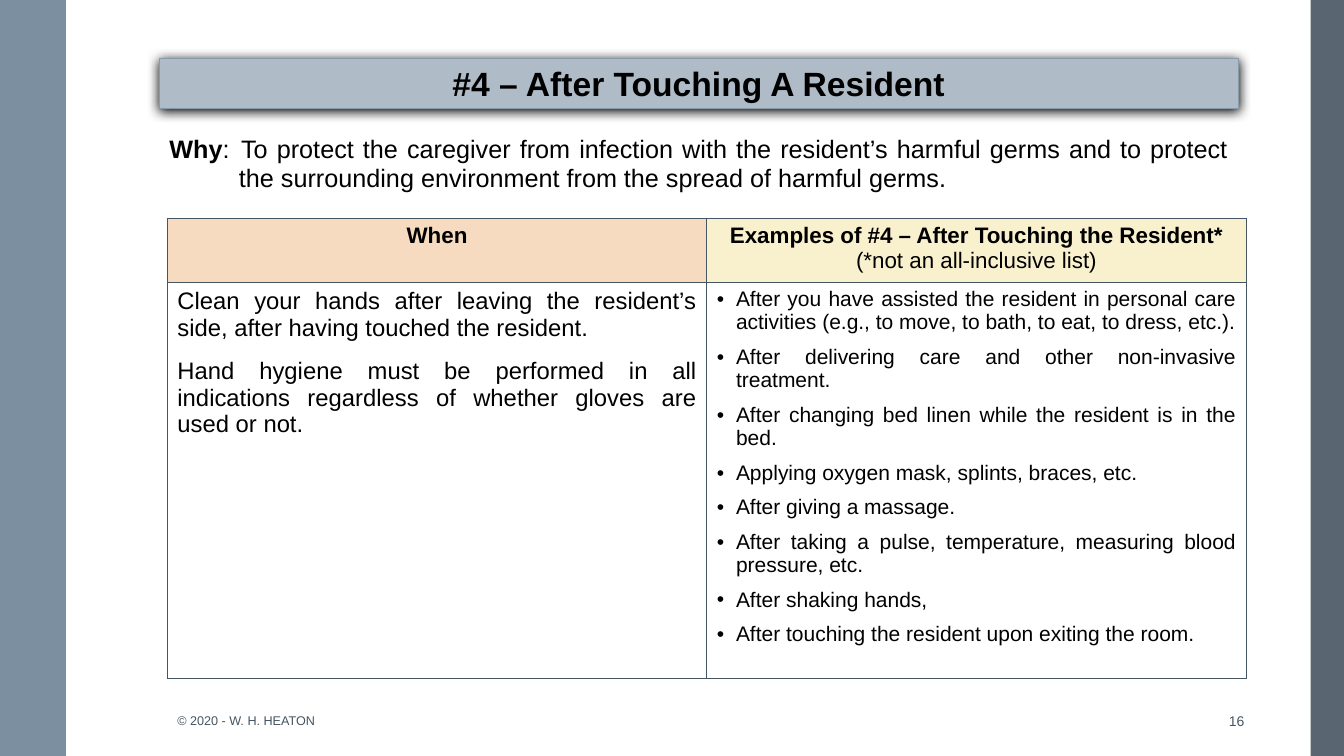
from dataclasses import dataclass

import pptx
import pptx.dml.color
import pptx.enum.shapes
import pptx.enum.text
import pptx.oxml
import pptx.oxml.ns
import pptx.util
from lxml import etree

Inches = pptx.util.Inches
Pt = pptx.util.Pt
ALIGN = pptx.enum.text.PP_ALIGN
ANCHOR = pptx.enum.text.MSO_ANCHOR


@dataclass(frozen=True)
class Theme:
    font: str = "Arial"
    black: str = "000000"
    white: str = "FFFFFF"
    slate: str = "465562"
    right_band: str = "475562"
    left_band: str = "6A8093"
    title_fill: str = "AFBBC6"
    title_line: str = "879AAA"
    when_fill: str = "F6DBC1"
    examples_fill: str = "F9F1CE"
    title_size: float = 24
    why_size: float = 18
    header_size: float = 16
    when_size: float = 17
    example_size: float = 15
    footer_size: float = 9
    number_size: float = 10


THEME = Theme()

WHEN = [
    "Clean your hands after leaving the resident’s side, after having touched the resident.",
    "Hand hygiene must be performed in all indications regardless of whether gloves are used or not.",
]
EXAMPLES = [
    "After you have assisted the resident in personal care activities "
    "(e.g., to move, to bath, to eat, to dress, etc.).",
    "After delivering care and other non-invasive treatment.",
    "After changing bed linen while the resident is in the bed.",
    "Applying oxygen mask, splints, braces, etc.",
    "After giving a massage.",
    "After taking a pulse, temperature, measuring blood pressure, etc.",
    "After shaking hands,",
    "After touching the resident upon exiting the room.",
]
WHY = (": \tTo protect the caregiver from infection with the resident’s harmful germs "
       "and to protect the surrounding environment from the spread of harmful germs.")


def rgb(color):
    return pptx.dml.color.RGBColor.from_string(color)


def add_xml(parent, tag, **attributes):
    return etree.SubElement(parent, pptx.oxml.ns.qn(tag), attributes)


def style_span(span, size, color=THEME.black, bold=False):
    span.font.name = THEME.font
    span.font.size = Pt(size)
    span.font.bold = bold
    span.font.color.rgb = rgb(color)


def write(frame, lines, size, align, color=THEME.black, bold=False, gap=0):
    """Write one paragraph per line and format its run."""
    frame.word_wrap = True
    frame.text = "\n".join(lines)
    for para in frame.paragraphs:
        para.alignment = align
        para.space_before = para.space_after = Pt(gap)
        for span in para.runs:
            style_span(span, size, color, bold)


def set_indent(para, inches, bullet=None):
    properties = para._p.get_or_add_pPr()
    properties.set("marL", str(Inches(inches)))
    properties.set("indent", str(Inches(-inches)))
    if bullet:
        add_xml(properties, "a:buFont", typeface=THEME.font)
        add_xml(properties, "a:buChar", char=bullet)


def add_rectangle(page, left, top, width, height, fill, alpha=None):
    box = page.shapes.add_shape(pptx.enum.shapes.MSO_SHAPE.RECTANGLE, Inches(left),
                                Inches(top), Inches(width), Inches(height))
    box.shadow.inherit = False
    box.fill.solid()
    box.fill.fore_color.rgb = rgb(fill)
    box.line.fill.background()
    if alpha:
        color = box._element.spPr.find(".//" + pptx.oxml.ns.qn("a:srgbClr"))
        add_xml(color, "a:alpha", val=str(alpha * 1000))
    return box


def add_edge_line(page, x, height):
    line = page.shapes.add_connector(pptx.enum.shapes.MSO_CONNECTOR.STRAIGHT,
                                     Inches(x), 0, Inches(x), Inches(height))
    line.line.color.rgb = rgb(THEME.white)
    line.line.width = Pt(1.5)
    add_xml(line._element.spPr, "a:effectLst")


def add_title(page, text):
    box = add_rectangle(page, 1.58, 0.58, 10.7, 0.5, THEME.title_fill)
    box.line.color.rgb = rgb(THEME.title_line)
    box.line.width = Pt(0.75)
    effects = box._element.spPr.find(pptx.oxml.ns.qn("a:effectLst"))
    shadow = add_xml(effects, "a:outerShdw", blurRad=str(Pt(8.5)), dist=str(Pt(1)),
                     dir="5400000", algn="t", rotWithShape="0")
    add_xml(shadow, "a:srgbClr", val=THEME.black)
    box.text_frame.vertical_anchor = ANCHOR.BOTTOM
    write(box.text_frame, [text], THEME.title_size, ALIGN.CENTER, bold=True)
    box.text_frame.paragraphs[0].line_spacing = 0.9


def add_footer(page, text, left, width, size, align):
    box = page.shapes.add_textbox(Inches(left), Inches(6.95), Inches(width), Inches(0.4))
    box.text_frame.vertical_anchor = ANCHOR.MIDDLE
    write(box.text_frame, [text], size, align, THEME.slate)


def style_cell(cell, fill, border):
    properties = cell._tc.get_or_add_tcPr()
    for side in ("a:lnL", "a:lnR", "a:lnT", "a:lnB"):
        line = add_xml(properties, side, w=str(Pt(1)))
        add_xml(add_xml(line, "a:solidFill"), "a:srgbClr", val=border)
    cell.fill.solid()
    cell.fill.fore_color.rgb = rgb(fill)


def add_table(page, left, top, widths, heights, fills, border):
    table = page.shapes.add_table(len(heights), len(widths), Inches(left), Inches(top),
                                  Inches(sum(widths)), Inches(sum(heights))).table
    table.first_row = table.horz_banding = False
    for column, width in zip(table.columns, widths):
        column.width = Inches(width)
    for row, height, row_fills in zip(table.rows, heights, fills):
        row.height = Inches(height)
        for cell, fill in zip(row.cells, row_fills):
            style_cell(cell, fill, border)
    return table


def add_guidance(page):
    fills = [[THEME.when_fill, THEME.examples_fill], [THEME.white, THEME.white]]
    table = add_table(page, 1.66, 2.17, [5.35, 5.35], [0.6, 3.93], fills, THEME.slate)
    # Header row
    headers = [["When"], ["Examples of #4 – After Touching the Resident*",
                          "(*not an all-inclusive list)"]]
    for column, lines in enumerate(headers):
        write(table.cell(0, column).text_frame, lines, THEME.header_size,
              ALIGN.CENTER, bold=True)
    table.cell(0, 1).text_frame.paragraphs[1].runs[0].font.bold = False
    # Body row
    write(table.cell(1, 0).text_frame, WHEN, THEME.when_size, ALIGN.JUSTIFY, gap=6)
    examples = table.cell(1, 1).text_frame
    write(examples, EXAMPLES, THEME.example_size, ALIGN.JUSTIFY, gap=4)
    for para in examples.paragraphs:
        set_indent(para, 0.19, "•")


def add_reason(page):
    table = add_table(page, 1.58, 1.3, [10.7], [0.7], [[THEME.white]], THEME.white)
    frame = table.cell(0, 0).text_frame
    write(frame, ["Why"], THEME.why_size, ALIGN.JUSTIFY, bold=True)
    para = frame.paragraphs[0]
    span = para.add_run()
    span.text = WHY
    style_span(span, THEME.why_size)
    set_indent(para, 0.69)


def main():
    deck = pptx.Presentation()
    deck.slide_width, deck.slide_height = Inches(13.33), Inches(7.5)
    page = deck.slides.add_slide(deck.slide_layouts[6])

    # Side bands
    add_rectangle(page, 13, 0, 0.33, 7.5, THEME.right_band, 90)
    add_rectangle(page, 0, 0, 0.67, 7.5, THEME.left_band, 88)
    add_edge_line(page, 0.67, 7.5)

    # Title and footer
    add_title(page, "#4 – After Touching A Resident")
    add_footer(page, "© 2020 - W. H. HEATON", 1.66, 4.35, THEME.footer_size, ALIGN.LEFT)
    add_footer(page, "16", 11.77, 0.67, THEME.number_size, ALIGN.RIGHT)

    # Tables
    add_guidance(page)
    add_reason(page)

    deck.save("out.pptx")


if __name__ == "__main__":
    main()
